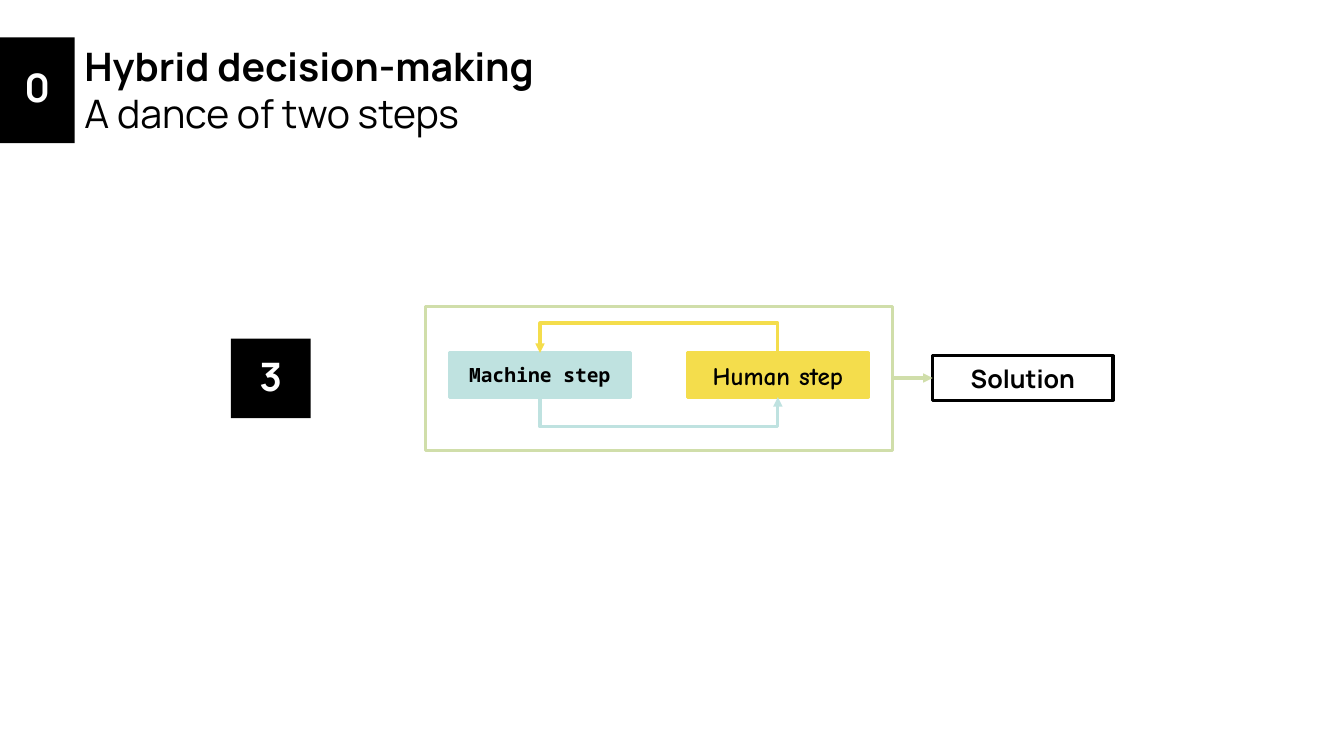
"""Build the slide on hybrid decision-making as a loop of two steps."""
from pptx import Presentation, util as u
from pptx.dml.color import RGBColor
from pptx.enum import shapes, text
from pptx.oxml import parse_xml
from pptx.oxml.ns import nsdecls

WIDTH, HEIGHT = u.Inches(13.33), u.Inches(7.5)
BLACK = RGBColor(0x00, 0x00, 0x00)
WHITE = RGBColor(0xFF, 0xFF, 0xFF)
GREEN = RGBColor(0xD0, 0xDE, 0xAA)
TEAL = RGBColor(0xBF, 0xE2, 0xE0)
YELLOW = RGBColor(0xF4, 0xDD, 0x4C)
SANS, MONO, HAND = "Manrope", "Noto Sans Mono", "Comic Neue"
STROKE = u.Pt(2.25)

STEP_WIDTH, STEP_HEIGHT = 13.43, 5.87
STEP_TOP = 46.67
STEP_LEFT, STEP_PITCH = 33.46, 17.7
LOOP_DEPTH = 3.47
FRAME_LEFT, FRAME_WIDTH = 31.66, 34.73
SOLUTION_LEFT = 69.39


def across(share):
    """Turn a percentage of the slide width into a length."""
    return u.Emu(round(WIDTH * share / 100))


def down(share):
    """Turn a percentage of the slide height into a length."""
    return u.Emu(round(HEIGHT * share / 100))


def style_text(para, font, size, color, bold=True):
    """Format every run of a paragraph."""
    for span in para.runs:
        span.font.name = font
        span.font.size = u.Pt(size)
        span.font.bold = bold
        span.font.color.rgb = color


def add_box(page, left, top, width, height, fill=None, line=None):
    """Add a rectangle with an optional fill and outline."""
    box = page.shapes.add_shape(shapes.MSO_SHAPE.RECTANGLE, across(left), down(top),
                                across(width), down(height))
    box.shadow.inherit = False
    if fill is None:
        box.fill.background()
    else:
        box.fill.solid()
        box.fill.fore_color.rgb = fill
    if line is None:
        box.line.fill.background()
    else:
        box.line.color.rgb = line
        box.line.width = STROKE
    return box


def add_label(box, words, font, size, color, margin=0.1, spacing=None):
    """Write one centred line inside a box."""
    frame = box.text_frame
    frame.text = words
    frame.word_wrap = True
    frame.vertical_anchor = text.MSO_ANCHOR.MIDDLE
    frame.margin_top = frame.margin_bottom = u.Inches(margin)
    para = frame.paragraphs[0]
    para.alignment = text.PP_ALIGN.CENTER
    para.line_spacing = spacing
    style_text(para, font, size, color)


def add_number(page, left, top, width, height, words):
    """Add a black tile with a white number."""
    tile = add_box(page, left, top, width, height, fill=BLACK)
    add_label(tile, words, SANS, 28, WHITE, margin=0.05, spacing=0.9)


def add_step(page, left, top, words, font, size, fill, line):
    """Add one labelled box of the process."""
    box = add_box(page, left, top, STEP_WIDTH, STEP_HEIGHT, fill, line)
    add_label(box, words, font, size, BLACK)


def add_title(page, title, subtitle):
    """Add the bold title with a light subtitle below it."""
    box = page.shapes.add_textbox(across(5.55), down(4.93), across(80.5), down(13.87))
    frame = box.text_frame
    frame.word_wrap = True
    frame.text = f"{title}\n{subtitle}"
    for para, bold in zip(frame.paragraphs, (True, False)):
        style_text(para, SANS, 28, BLACK, bold)


def add_arrow(page, kind, start, end, color, arrow_end="tailEnd"):
    """Add a connector with a triangle at one of its ends."""
    arrow = page.shapes.add_connector(kind, *start, *end)
    arrow.line.color.rgb = color
    arrow.line.width = STROKE
    arrow.line._get_or_add_ln().append(
        parse_xml(f'<a:{arrow_end} {nsdecls("a")} type="triangle"/>'))
    arrow._element.spPr.append(parse_xml(f'<a:effectLst {nsdecls("a")}/>'))
    return arrow


def add_loop(page, level, depth, color, arrow_end):
    """Link the two steps by a quarter-turned elbow that bulges by depth."""
    centre = across(STEP_LEFT + (STEP_WIDTH + STEP_PITCH) / 2)
    half = across(STEP_PITCH / 2)
    sliver = u.Pt(0.05)
    start = (centre, down(level) - half)
    end = (centre + sliver, down(level) + half)
    arrow = add_arrow(page, shapes.MSO_CONNECTOR.ELBOW, start, end, color, arrow_end)
    properties = arrow._element.spPr
    properties.xfrm.set("rot", "5400000")
    bend = round(down(depth) / sliver * 100000)
    properties.prstGeom.get_or_add_avLst().append(
        parse_xml(f'<a:gd {nsdecls("a")} name="adj1" fmla="val {bend}"/>'))


def main():
    """Compose and save the slide."""
    deck = Presentation()
    deck.slide_width, deck.slide_height = WIDTH, HEIGHT
    page = deck.slides.add_slide(deck.slide_layouts[6])

    add_title(page, "Hybrid decision-making", "A dance of two steps")
    add_number(page, 0, 4.93, 5.55, 14, "0")
    add_box(page, FRAME_LEFT, 40.53, FRAME_WIDTH, 19.07, line=GREEN)
    add_step(page, STEP_LEFT, STEP_TOP, "Machine step", MONO, 14, TEAL, TEAL)
    add_step(page, STEP_LEFT + STEP_PITCH, STEP_TOP, "Human step", HAND, 18, YELLOW, YELLOW)
    add_step(page, SOLUTION_LEFT, 47.07, "Solution", SANS, 18, None, BLACK)
    add_arrow(page, shapes.MSO_CONNECTOR.STRAIGHT,
              (across(FRAME_LEFT + FRAME_WIDTH), down(50)),
              (across(SOLUTION_LEFT), down(50)), GREEN)
    add_loop(page, STEP_TOP + STEP_HEIGHT, LOOP_DEPTH, TEAL, "headEnd")
    add_loop(page, STEP_TOP, -LOOP_DEPTH, YELLOW, "tailEnd")
    add_number(page, 17.18, 44.8, 5.93, 10.53, "3")
    deck.save("out.pptx")


if __name__ == "__main__":
    main()
